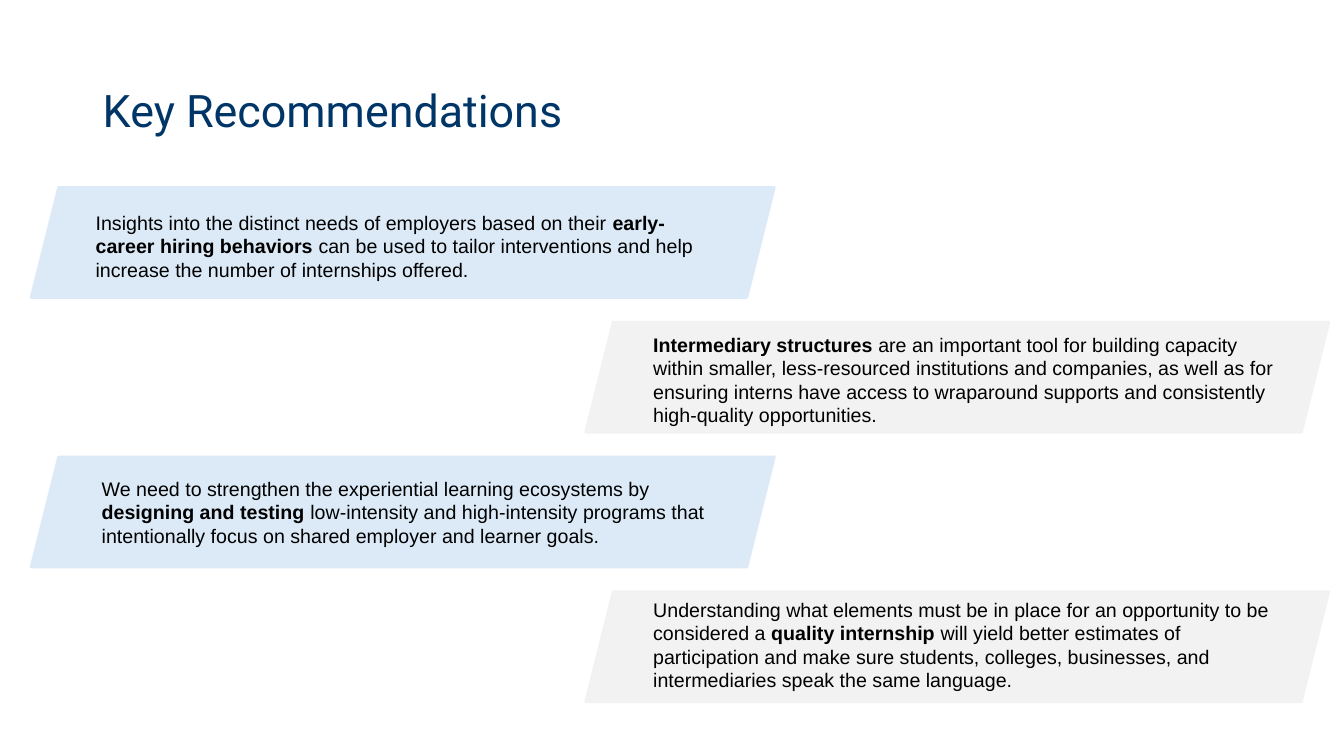
from pptx import Presentation
from pptx.dml.color import RGBColor
from pptx.enum.shapes import MSO_SHAPE
from pptx.enum.text import MSO_ANCHOR
from pptx.util import Inches, Pt

SLANT = MSO_SHAPE.PARALLELOGRAM
TOP, MIDDLE = MSO_ANCHOR.TOP, MSO_ANCHOR.MIDDLE
NAVY = RGBColor(0x00, 0x36, 0x67)
BLACK = RGBColor(0x00, 0x00, 0x00)
BLUE = RGBColor(0xDC, 0xEA, 0xF7)
GRAY = RGBColor(0xF2, 0xF2, 0xF2)


class Deck:
    """Holds the fonts and the current slide."""

    head = "Roboto"
    body = "Arial"

    def __init__(self):
        self.prs = Presentation()
        self.prs.slide_width = Inches(13.33)
        self.prs.slide_height = Inches(7.5)
        self.slide = self.prs.slides.add_slide(self.prs.slide_layouts[6])

    def text(self, left, top, width, height, anchor=TOP):
        box = self.slide.shapes.add_textbox(
            Inches(left), Inches(top), Inches(width), Inches(height))
        frame = box.text_frame
        frame.word_wrap = True
        frame.vertical_anchor = anchor
        return frame.paragraphs[0]

    def run(self, para, words, size, face, color, bold=False):
        run = para.add_run()
        run.text = words
        font = run.font
        font.size, font.name, font.bold = Pt(size), face, bold
        font.color.rgb = color

    def title(self, words):
        para = self.text(0.92, 0.4, 7.78, 1.45, MIDDLE)
        para.line_spacing = 0.9
        self.run(para, words, 32, self.head, NAVY)

    def band(self, left, top, color):
        shape = self.slide.shapes.add_shape(
            SLANT, Inches(left), Inches(top), Inches(7.37), Inches(1.09))
        shape.shadow.inherit = False
        shape.fill.solid()
        shape.fill.fore_color.rgb = color
        shape.line.color.rgb = color
        shape.line.width = Pt(2)

    def note(self, spot, parts):
        para = self.text(*spot)
        for words, bold in parts:
            self.run(para, words, 14, self.body, BLACK, bold)


# Text box and runs (words, bold) of each recommendation
NOTES = [
    ((0.85, 2.04, 6.29, 0.81), [
        ("Insights into the distinct needs of employers based on their ", False),
        ("early-career hiring behaviors", True),
        (" can be used to tailor interventions and help increase the number "
         "of internships offered.", False)]),
    ((6.38, 3.25, 6.51, 1.04), [
        ("Intermediary structures ", True),
        ("are an important tool for building capacity within smaller, "
         "less-resourced institutions and companies, as well as for ensuring "
         "interns have access to wraparound supports and consistently "
         "high-quality opportunities.", False)]),
    ((0.91, 4.68, 6.29, 0.81), [
        ("We need to strengthen the experiential learning ecosystems by ", False),
        ("designing and testing ", True),
        ("low-intensity and high-intensity programs that intentionally focus "
         "on shared employer and learner goals.", False)]),
    ((6.38, 5.88, 6.51, 1.04), [
        ("Understanding what elements must be in place for an opportunity to "
         "be considered a ", False),
        ("quality internship", True),
        (" will yield better estimates of participation and make sure "
         "students, colleges, businesses, and intermediaries speak the same "
         "language.", False)]),
]


def main():
    deck = Deck()
    deck.title("Key Recommendations")

    # Bands alternate between left and right, at an even step
    sides = [(0.31, BLUE), (5.81, GRAY)]
    for i, (spot, parts) in enumerate(NOTES):
        left, color = sides[i % 2]
        deck.band(left, 1.86 + 1.337 * i, color)
        deck.note(spot, parts)

    deck.prs.save("out.pptx")


if __name__ == "__main__":
    main()
